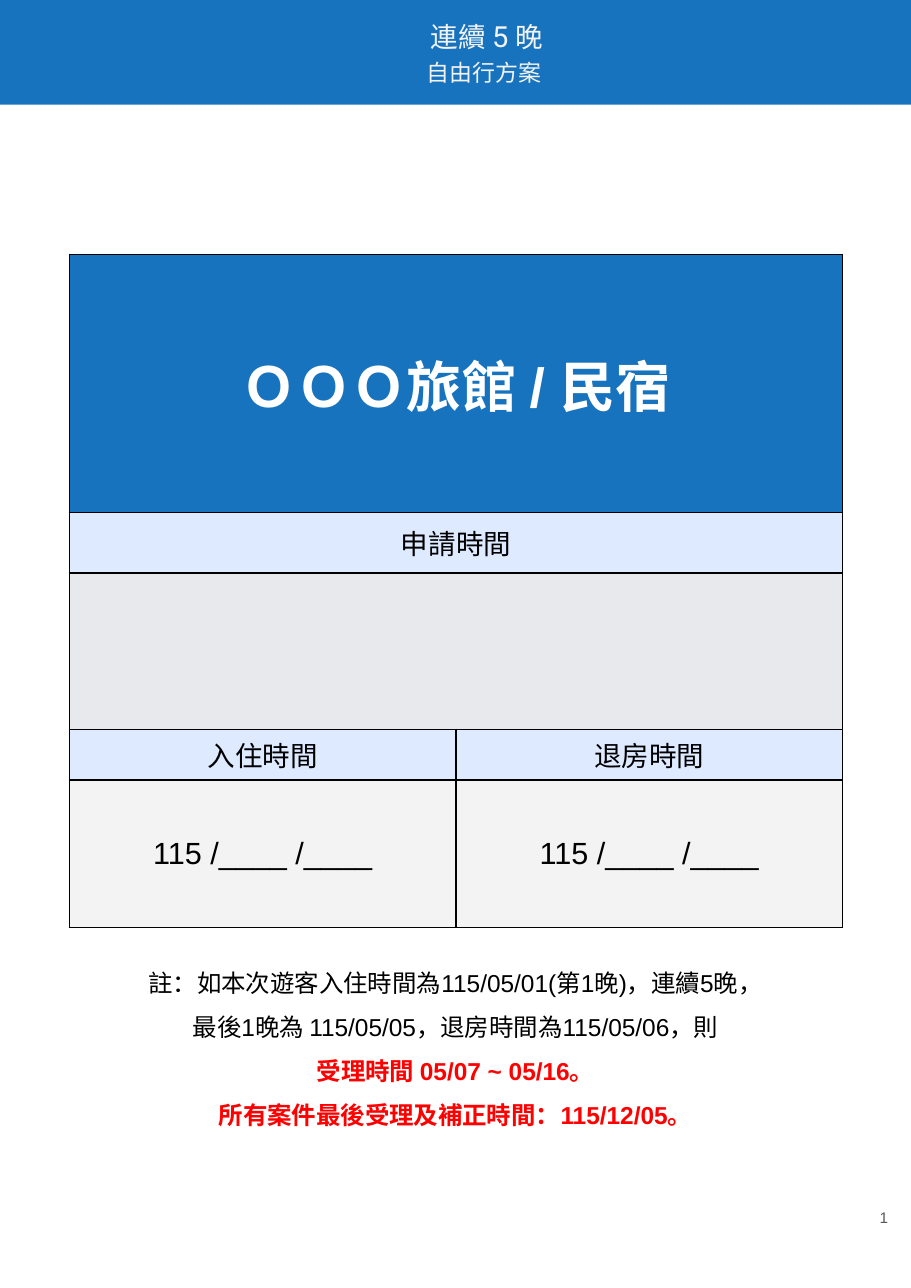
from dataclasses import dataclass

from lxml.etree import SubElement
from pptx import Presentation
from pptx.dml.color import RGBColor
from pptx.enum.shapes import MSO_SHAPE
from pptx.enum.text import MSO_ANCHOR, PP_ALIGN
from pptx.oxml.ns import qn
from pptx.util import Inches, Pt

BLUE = "1773BE"
PALE_BLUE = "DEEAFF"
PALE_GRAY = "F3F3F3"
MID_GRAY = "E7E9EC"
BLACK = "000000"
WHITE = "FFFFFF"
RED = "FF0000"


@dataclass(frozen=True)
class Span:
    text: str
    size: float
    color: str = BLACK
    bold: bool = False
    font: str = "Arial"


@dataclass(frozen=True)
class Row:
    height: float
    fill: str
    spans: tuple[Span, ...]


@dataclass(frozen=True)
class TextBox:
    left: float
    top: float
    width: float
    height: float
    lines: tuple[tuple[Span, ...], ...]
    align: PP_ALIGN = PP_ALIGN.CENTER
    anchor: MSO_ANCHOR = MSO_ANCHOR.TOP
    margin: float = 0.1
    spacing: float = 1.0


def rgb(color: str) -> RGBColor:
    return RGBColor.from_string(color)


def add_span(para, span: Span) -> None:
    for index, text in enumerate(span.text.split("\n")):
        if index:
            para.add_line_break()
        run = para.add_run()
        run.text = text
        run.font.size = Pt(span.size)
        run.font.name = span.font
        run.font.bold = span.bold
        run.font.color.rgb = rgb(span.color)


def add_text_box(page, spec_box: TextBox) -> None:
    box = page.shapes.add_textbox(
        Inches(spec_box.left), Inches(spec_box.top),
        Inches(spec_box.width), Inches(spec_box.height),
    )
    frame = box.text_frame
    frame.word_wrap = True
    frame.vertical_anchor = spec_box.anchor
    frame.margin_left = frame.margin_right = Inches(0.1)
    frame.margin_top = frame.margin_bottom = Inches(spec_box.margin)
    for index, line in enumerate(spec_box.lines):
        para = frame.add_paragraph() if index else frame.paragraphs[0]
        para.alignment = spec_box.align
        para.line_spacing = spec_box.spacing
        for span in line:
            add_span(para, span)


def add_banner(page) -> None:
    banner = page.shapes.add_shape(
        MSO_SHAPE.RECTANGLE, Inches(-0.04), Inches(-0.02), Inches(8.33), Inches(0.97)
    )
    banner.shadow.inherit = False
    banner.fill.solid()
    banner.fill.fore_color.rgb = rgb(BLUE)
    banner.line.fill.background()


def style_cell(cell, fill: str) -> None:
    properties = cell._tc.get_or_add_tcPr()
    for side in ("a:lnL", "a:lnR", "a:lnT", "a:lnB"):
        border = SubElement(properties, qn(side), w=str(Pt(1)))
        solid = SubElement(border, qn("a:solidFill"))
        SubElement(solid, qn("a:srgbClr"), val=BLACK)
    cell.fill.solid()
    cell.fill.fore_color.rgb = rgb(fill)
    cell.vertical_anchor = MSO_ANCHOR.MIDDLE


def add_stay_table(page, rows: tuple[Row, ...], column_width: float) -> None:
    table = page.shapes.add_table(
        len(rows), 2, Inches(0.63), Inches(2.31),
        Inches(2 * column_width), Inches(sum(row.height for row in rows)),
    ).table
    for column in table.columns:
        column.width = Inches(column_width)
    for index, row in enumerate(rows):
        table.rows[index].height = Inches(row.height)
        for cell in table.rows[index].cells:
            style_cell(cell, row.fill)
        if len(row.spans) < 2:
            table.cell(index, 0).merge(table.cell(index, 1))
        for column, span in enumerate(row.spans):
            para = table.cell(index, column).text_frame.paragraphs[0]
            para.alignment = PP_ALIGN.CENTER
            add_span(para, span)


HEADING = TextBox(2.4, 0.07, 4.04, 0.94, (
    (
        Span("連續 ", 18, PALE_GRAY, font="Roboto"),
        Span("5", 19, PALE_GRAY, font="Roboto"),
        Span(" 晚", 18, PALE_GRAY, font="Roboto"),
    ),
    (
        Span("自由行方案", 15, PALE_GRAY, font="Roboto"),
        Span(" ", 18, PALE_GRAY, font="Roboto"),
    ),
))

DATE_BLANK = Span("115 /____ /____", 20)
STAY_ROWS = (
    Row(2.34, BLUE, (Span("ＯＯＯ旅館 / 民宿", 36, WHITE, bold=True),)),
    Row(0.55, PALE_BLUE, (Span("申請時間", 18),)),
    Row(1.42, MID_GRAY, ()),
    Row(0.46, PALE_BLUE, (Span("入住時間", 18), Span("退房時間", 18))),
    Row(1.34, PALE_GRAY, (DATE_BLANK, DATE_BLANK)),
)

NOTE = TextBox(0.63, 8.55, 7.01, 1.68, (
    (Span("註：如本次遊客入住時間為115/05/01(第1晚)，連續5晚，\n"
          "最後1晚為 115/05/05，退房時間為115/05/06，則", 16),),
    (Span("受理時間 05/07 ~ 05/16。", 16, RED, bold=True),),
    (Span("所有案件最後受理及補正時間：115/12/05。", 16, RED, bold=True),),
), spacing=1.5)

PAGE_NUMBER = TextBox(
    7.66, 10.6, 0.5, 0.89, ((Span("1", 10, "595959"),),),
    align=PP_ALIGN.RIGHT, anchor=MSO_ANCHOR.MIDDLE, margin=0.05,
)


def main() -> None:
    deck = Presentation()
    deck.slide_width = Inches(8.27)
    deck.slide_height = Inches(11.69)
    page = deck.slides.add_slide(deck.slide_layouts[6])
    add_banner(page)
    add_text_box(page, HEADING)
    add_stay_table(page, STAY_ROWS, 3.51)
    add_text_box(page, PAGE_NUMBER)
    add_text_box(page, NOTE)
    deck.save("out.pptx")


if __name__ == "__main__":
    main()
